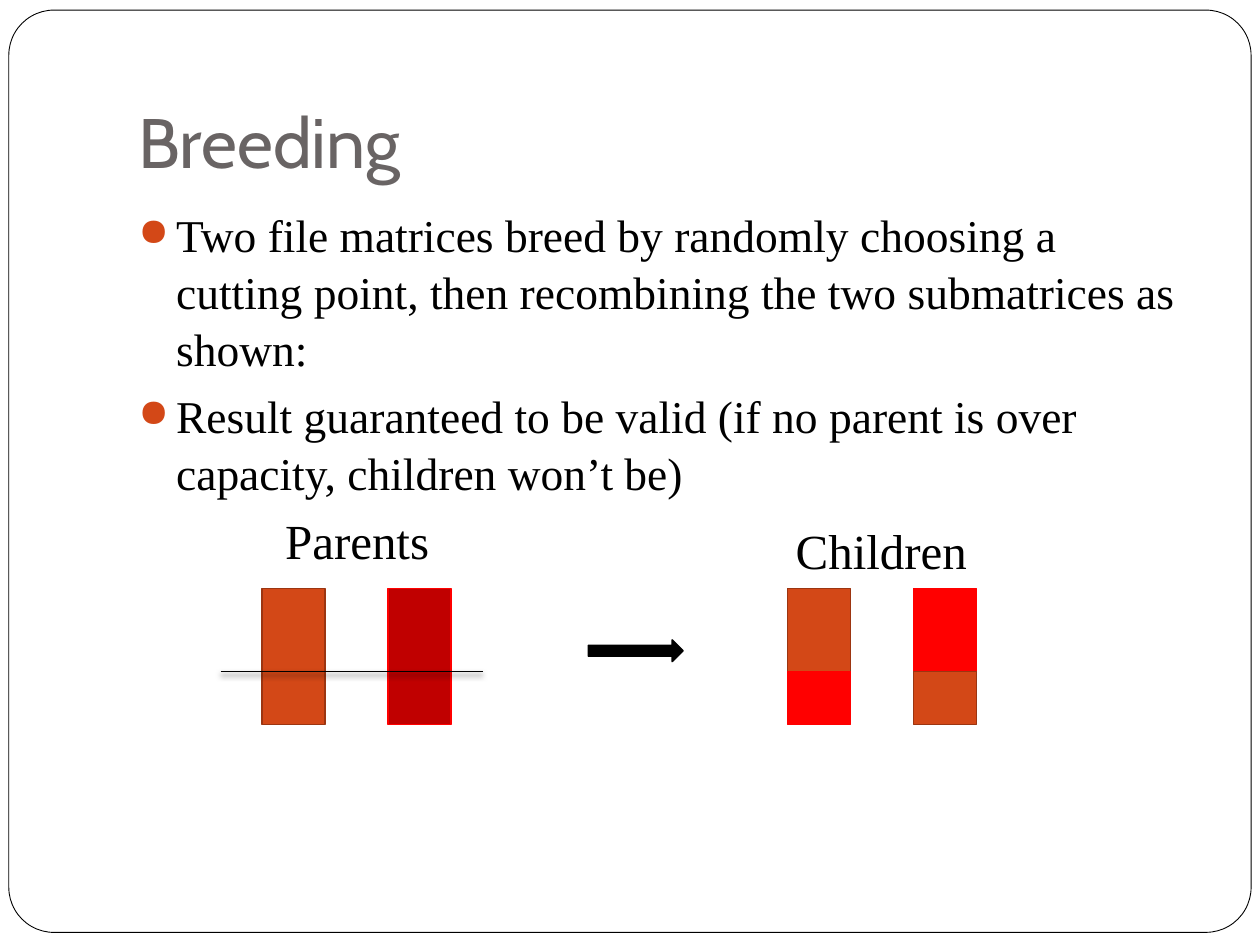
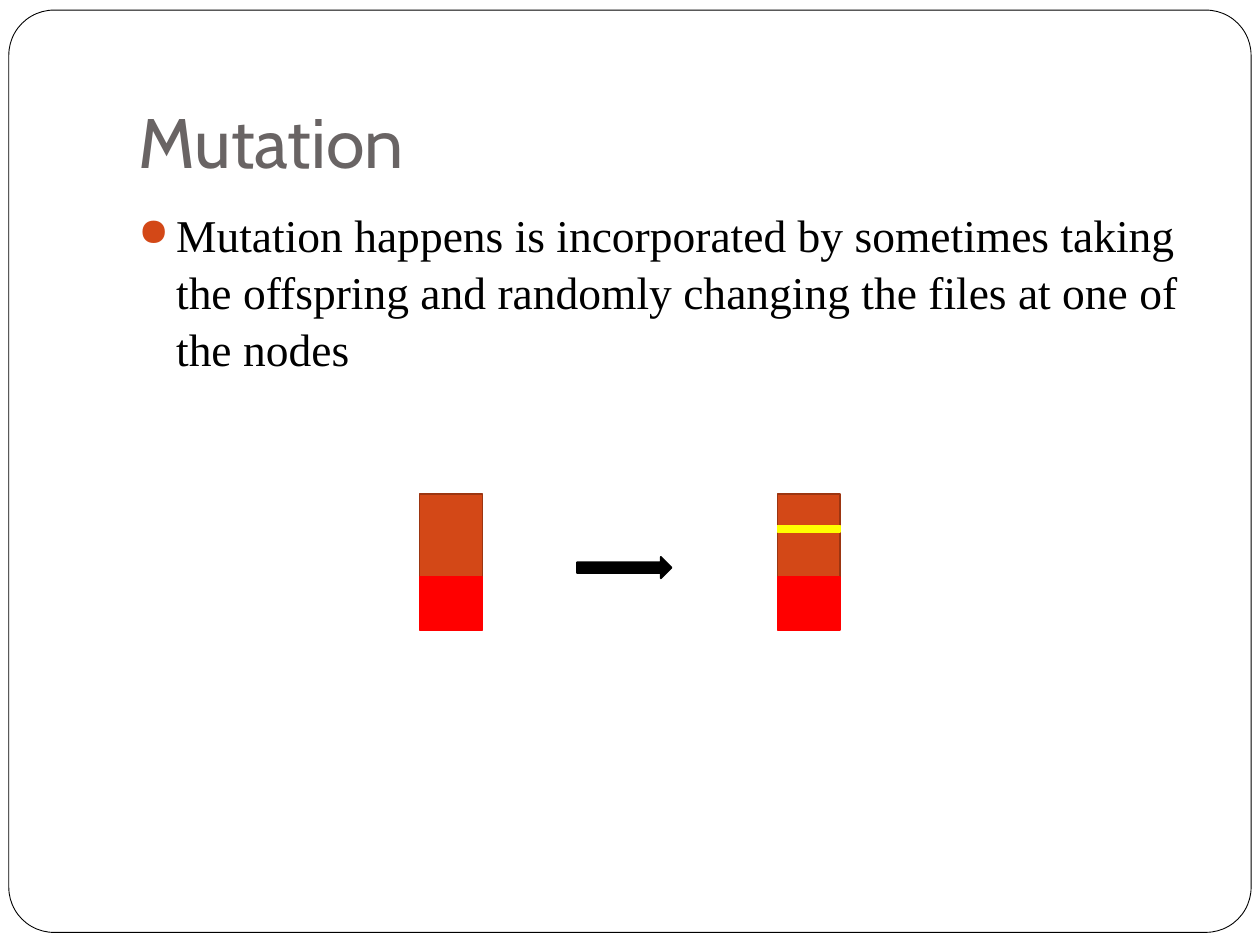
from lxml.etree import SubElement
from pptx import Presentation
from pptx.dml.color import RGBColor
from pptx.enum.shapes import MSO_CONNECTOR as Link, MSO_SHAPE as Kind
from pptx.enum.text import MSO_ANCHOR as Anchor, MSO_AUTO_SIZE as Fit, PP_ALIGN as Align
from pptx.oxml.ns import qn
from pptx.util import Inches, Pt

BLACK, GREY = "000000", "696464"
RUST, RED, WINE, YELLOW = "D34817", "FF0000", "C00000", "FFFF00"
EDGE = {RUST: "9C3511", WINE: RED}  # other fills are edged in their own colour
SERIF, SANS = "Times New Roman", "Cabin"
WIDE, UPPER, LOWER = 0.5, 0.66, 0.42  # bar width and the heights of its two parts
TALL = UPPER + LOWER


def color(code):
    return RGBColor.from_string(code)


def box(*sizes):
    return [Inches(size) for size in sizes]


def node(parent, tag, **attrs):
    return SubElement(parent, qn(tag), {key: str(val) for key, val in attrs.items()})


def write(para, text, size=26, font=SERIF, ink=BLACK, align=Align.LEFT):
    run = para.add_run()
    run.text = text
    run.font.size, run.font.name = Pt(size), font
    run.font.color.rgb = color(ink)
    para.alignment = align


def bullet(para):
    props = para._p.get_or_add_pPr()
    props.set("marL", str(Inches(0.3)))
    props.set("indent", str(Inches(-0.3)))
    node(node(props, "a:buClr"), "a:srgbClr", val=RUST)
    node(props, "a:buSzPct", val=85000)
    node(props, "a:buChar", char="●")


class Deck:
    def __init__(self):
        self.prs = Presentation()
        self.prs.slide_width, self.prs.slide_height = box(10, 7.5)
        self.layout = self.prs.slide_layouts[5]
        self.slide = None

    def page(self, title, points):
        first = self.slide is None
        self.slide = self.prs.slides.add_slide(self.layout)
        if first:
            self.frame()
        self.title(title)
        self.body(points)

    def frame(self):
        """Put the rounded border on the layout, behind all slide content."""
        edge = self.shape(self.slide.shapes, Kind.ROUNDED_RECTANGLE,
                          0.07, 0.08, 9.86, 7.32, "FFFFFF", BLACK, 0.5)
        edge.adjustments[0] = 0.049
        self.layout.shapes.element.insert(2, edge.element)

    def title(self, text):
        head = self.slide.shapes.title
        head.left, head.top, head.width, head.height = box(1, 0.3, 8.5, 1.25)
        area = head.text_frame
        area.auto_size, area.vertical_anchor = Fit.NONE, Anchor.BOTTOM
        area.margin_left = area.margin_right = area.margin_bottom = Inches(0.1)
        area.margin_top = Inches(0.05)
        write(area.paragraphs[0], text, size=40, font=SANS, ink=GREY)

    def body(self, points):
        area = self.slide.shapes.add_textbox(*box(1, 1.58, 8.5, 5)).text_frame
        area.word_wrap = True
        for i, text in enumerate(points):
            para = area.add_paragraph() if i else area.paragraphs[0]
            para.space_before, para.line_spacing = Pt(5.8), 1.04
            bullet(para)
            write(para, text)

    def group(self):
        return self.slide.shapes.add_group_shape().shapes

    def shape(self, home, kind, x, y, w, h, fill, line=None, weight=1):
        item = home.add_shape(kind, *box(x, y, w, h))
        item.shadow.inherit = False
        item.fill.solid()
        item.fill.fore_color.rgb = color(fill)
        item.line.color.rgb = color(line or EDGE.get(fill, fill))
        item.line.width = Pt(weight)
        return item

    def bar(self, home, x, y, *parts):
        """Stack (height, fill) parts downwards from y."""
        for high, fill in parts:
            self.shape(home, Kind.RECTANGLE, x, y, WIDE, high, fill)
            y += high

    def arrow(self, x, y):
        self.shape(self.slide.shapes, Kind.RIGHT_ARROW, x, y, 0.75, 0.17, BLACK)

    def label(self, home, x, y, text):
        area = home.add_textbox(*box(x, y, 2.33, 0.57)).text_frame
        area.word_wrap, area.auto_size = True, Fit.SHAPE_TO_FIT_TEXT
        write(area.paragraphs[0], text, size=28, align=Align.CENTER)

    def cut(self, x, y, end):
        """Draw a level line with a soft shadow below it."""
        line = self.slide.shapes.add_connector(Link.STRAIGHT, *box(x, y, end, y))
        line.line.color.rgb, line.line.width = color(BLACK), Pt(1)
        effects = node(line._element.spPr, "a:effectLst")
        shade = node(effects, "a:outerShdw", blurRad=Pt(3), dist=Pt(2),
                     dir=90 * 60000, rotWithShape=0)
        node(node(shade, "a:srgbClr", val=BLACK), "a:alpha", val=50000)


def breeding(deck):
    deck.page("Breeding", [
        "Two file matrices breed by randomly choosing a cutting point, "
        "then recombining the two submatrices as shown:",
        "Result guaranteed to be valid (if no parent is over capacity, children won’t be)",
    ])
    top = 4.67
    parents = deck.group()
    for i, fill in enumerate((RUST, WINE)):
        deck.bar(parents, 2.08 + i, top, (TALL, fill))
    deck.label(parents, 1.67, 4, "Parents")

    children = deck.group()
    for i, (head, tail) in enumerate(((RUST, RED), (RED, RUST))):
        deck.bar(children, 6.25 + i, top, (UPPER, head), (LOWER, tail))
    deck.label(children, 5.83, 4.08, "Children")

    deck.cut(1.75, top + UPPER, 3.83)
    deck.arrow(4.67, 5.08)


def mutation(deck):
    deck.page("Mutation", [
        "Mutation happens is incorporated by sometimes taking the offspring "
        "and randomly changing the files at one of the nodes",
    ])
    top, after = 3.92, 6.17
    for x in (3.33, after):
        child = deck.group()
        deck.bar(child, x, top, (UPPER, RUST), (LOWER, RED))
    deck.bar(child, after, 4.17, (0.05, YELLOW))
    deck.arrow(4.58, 4.42)


def main():
    deck = Deck()
    breeding(deck)
    mutation(deck)
    deck.prs.save("out.pptx")


if __name__ == "__main__":
    main()
